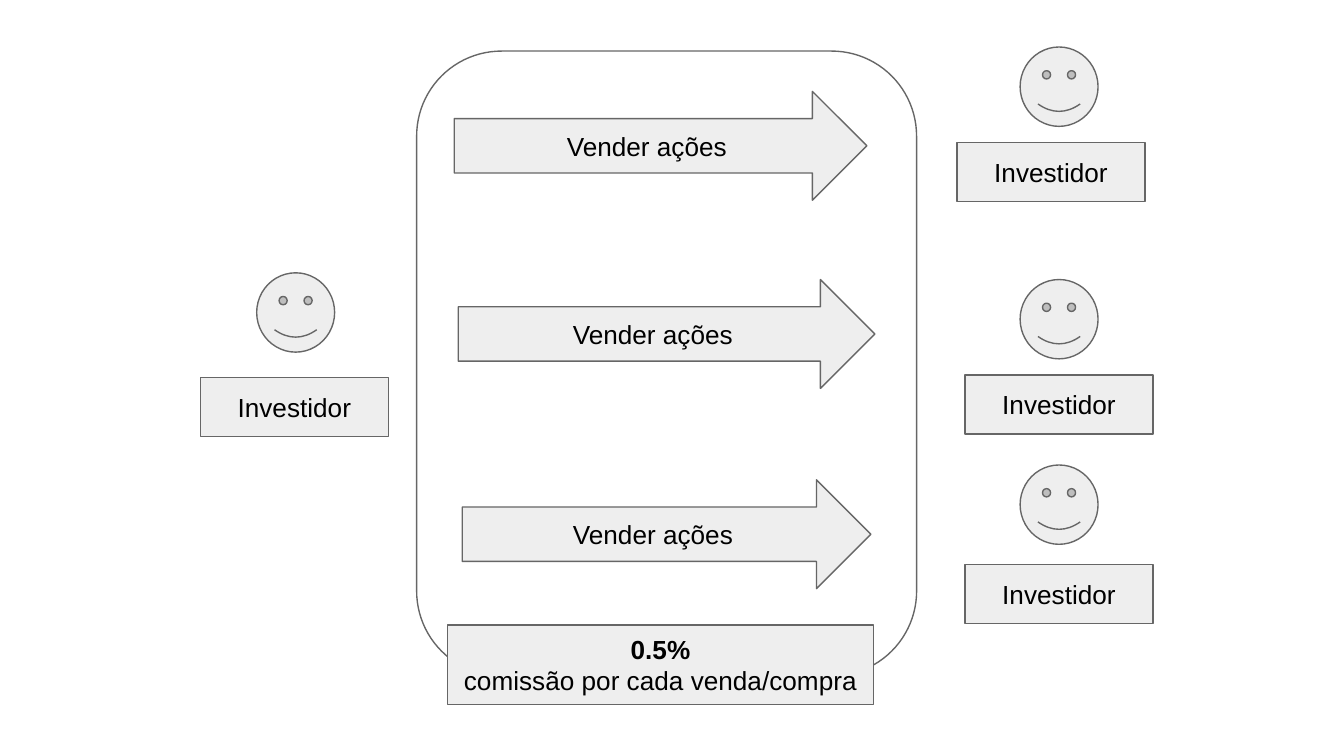
import pptx
import pptx.util
import pptx.dml.color
import pptx.enum.shapes
import pptx.enum.text

Inches = pptx.util.Inches
Pt = pptx.util.Pt
RGBColor = pptx.dml.color.RGBColor
SHAPE = pptx.enum.shapes.MSO_SHAPE

GREY = RGBColor(0xEE, 0xEE, 0xEE)
OUTLINE = RGBColor(0x66, 0x66, 0x66)
BLACK = RGBColor(0, 0, 0)

PERSON = "Investidor"
ACTION = "Vender ações"
COMMISSION = ["0.5%", "comissão por cada venda/compra"]

MARKET = (3.1, 0.38, 3.72, 4.65)
COMMISSION_BOX = (3.33, 4.65, 3.17, 0.59)
ARROWS = [(3.38, 0.68, 3.07), (3.41, 2.08, 3.1), (3.44, 3.57, 3.04)]
ARROW_HEIGHT = 0.81
FACE_SIZE = (0.58, 0.59)
LABEL_SIZE = (1.4, 0.44)
INVESTORS = [
    {"face": (1.91, 2.03), "label": (1.49, 2.81)},
    {"face": (7.59, 0.35), "label": (7.12, 1.06)},
    {"face": (7.59, 2.08), "label": (7.18, 2.79)},
    {"face": (7.59, 3.46), "label": (7.18, 4.2)},
]


def add_shape(slide, kind, box, lines=(), adjustments=(), filled=True):
    s = slide.shapes.add_shape(kind, *map(Inches, box))
    s.shadow.inherit = False
    for i, value in enumerate(adjustments):
        s.adjustments[i] = value
    if filled:
        s.fill.solid()
        s.fill.fore_color.rgb = GREY
    else:
        s.fill.background()
    s.line.color.rgb = OUTLINE
    s.line.width = Pt(0.75)
    if lines:
        tf = s.text_frame
        tf.text = "\n".join(lines)
        tf.word_wrap = True
        tf.vertical_anchor = pptx.enum.text.MSO_ANCHOR.MIDDLE
        tf.margin_left = tf.margin_right = Inches(0.1)
        tf.margin_top = tf.margin_bottom = Inches(0.1)
        for p in tf.paragraphs:
            p.alignment = pptx.enum.text.PP_ALIGN.CENTER
            for r in p.runs:
                r.font.name = "Arial"
                r.font.size = Pt(14)
                r.font.color.rgb = BLACK
    return s


def main():
    prs = pptx.Presentation()
    prs.slide_width = Inches(10)
    prs.slide_height = prs.slide_width * 9 // 16
    slide = prs.slides.add_slide(prs.slide_layouts[6])

    add_shape(slide, SHAPE.ROUNDED_RECTANGLE, MARKET, adjustments=[0.17], filled=False)
    for left, top, width in ARROWS:
        add_shape(slide, SHAPE.RIGHT_ARROW, (left, top, width, ARROW_HEIGHT),
                  [ACTION], [0.5, 0.5])
    for investor in INVESTORS:
        add_shape(slide, SHAPE.SMILEY_FACE, investor["face"] + FACE_SIZE, adjustments=[0.05])
        add_shape(slide, SHAPE.RECTANGLE, investor["label"] + LABEL_SIZE, [PERSON])
    s = add_shape(slide, SHAPE.RECTANGLE, COMMISSION_BOX, COMMISSION)
    s.text_frame.paragraphs[0].runs[0].font.bold = True

    prs.save("out.pptx")


if __name__ == "__main__":
    main()
